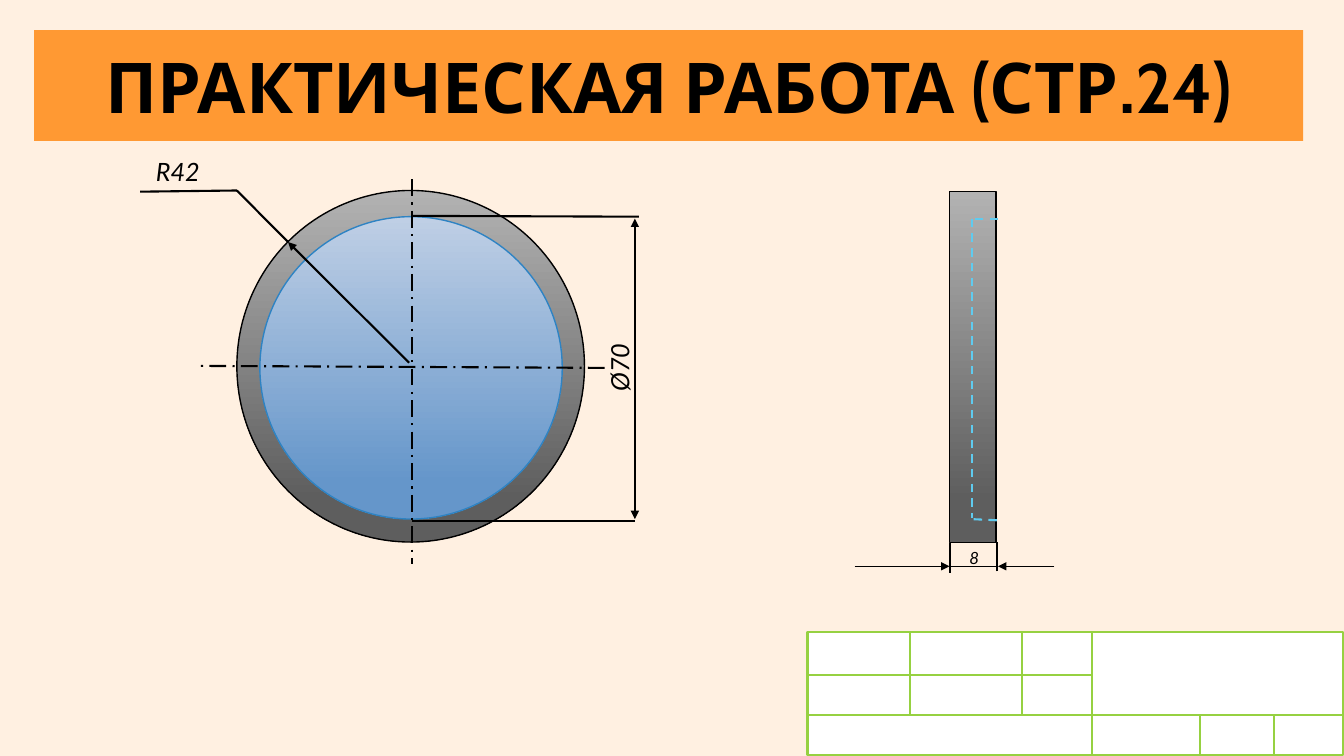
from lxml.etree import SubElement
from pptx import Presentation
from pptx.dml.color import RGBColor
from pptx.enum.dml import MSO_LINE_DASH_STYLE as Dash
from pptx.enum.shapes import MSO_CONNECTOR as Connector, MSO_SHAPE as Preset
from pptx.enum.text import MSO_ANCHOR as Anchor, MSO_AUTO_SIZE as AutoSize, PP_ALIGN as Align
from pptx.oxml.ns import qn
from pptx.util import Cm, Pt

# Content, lengths in cm
TITLE = "ПРАКТИЧЕСКАЯ РАБОТА (СТР.24)"
TITLE_BOX = (0.86, 0.76, 31.98, 2.79)

STAMP_BOX = (20.35, 15.93, 13.49, 3.1)
STAMP_SPLIT = 27.51
STAMP_COLUMNS_ABOVE = [22.94, 25.76]
STAMP_COLUMNS_BELOW = [30.23, 32.11]
STAMP_ROWS = [17.02, 18.01]

OUTER_CIRCLE = (5.97, 4.8, 8.76, 8.86)
INNER_CIRCLE = (6.55, 5.46, 7.62, 7.62)
SIDE_VIEW = (23.93, 4.83, 1.17, 8.84)

AXES = [(10.39, 4.52, 10.39, 14.2), (15.24, 9.27, 5.05, 9.22)]
HIDDEN_EDGES = [
    (24.49, 5.51, 24.49, 13.06),
    (25.12, 13.11, 24.46, 13.08),
    (25.15, 5.51, 24.51, 5.51),
]
# Each dimension line with its arrowheads
FRONT_DIMENSIONS = [
    ((16.0, 13.13, 10.39, 13.13), ()),
    ((10.31, 9.14, 7.26, 6.1), ("tail",)),
    ((7.26, 6.1, 5.97, 4.8), ()),
    ((5.97, 4.8, 3.53, 4.83), ()),
    ((16.1, 5.46, 10.41, 5.44), ()),
    ((16.0, 5.51, 16.0, 13.08), ("head", "tail")),
]
SIDE_EXTENSIONS = [(23.95, 14.43, 23.95, 13.69), (25.12, 14.4, 25.12, 13.67)]
SIDE_DIMENSIONS = [
    ((21.54, 14.27, 23.93, 14.27), ("tail",)),
    ((25.12, 14.27, 23.95, 14.27), ()),
    ((26.57, 14.27, 25.15, 14.27), ("tail",)),
]
# Text, box, size name, rotation
LABELS = [
    ("R42", (3.68, 3.81, 1.83, 1.02), "label", 0),
    ("Ø70", (14.73, 7.95, 2.54, 1.8), "label", 270),
    ("8", (24.18, 13.67, 2.67, 0.76), "small", 0),
]

THEME = {
    "background": "FFF0E1", "banner": "FF9933", "ink": "000000",
    "paper": "FFFFFF", "stamp": "96D141", "hidden": "5FCBEF",
    "glass_edge": "2E83C3",
    "metal": ("B2B2B2", "5E5E5E"), "glass": ("BFCFE5", "6596CA"),
    "title_font": "Cabin", "label_font": "Lato",
    "title": 50, "label": 18, "small": 12,
    "thick": 1.5, "thin": 1,
}


def color(name):
    return RGBColor.from_string(THEME[name])


def apply_format(target, values):
    for name, value in values.items():
        setattr(target, name, value)


def add_box(slide, preset, box, fill, edge=None, width="thin"):
    shape = slide.shapes.add_shape(preset, *map(Cm, box))
    shape.shadow.inherit = False
    if isinstance(THEME[fill], tuple):
        shape.fill.gradient()
        shape.fill.gradient_angle = 270
        for stop, place, tone in zip(shape.fill.gradient_stops, (0, 0.88), THEME[fill]):
            stop.color.rgb = RGBColor.from_string(tone)
            stop.position = place
    else:
        shape.fill.solid()
        shape.fill.fore_color.rgb = color(fill)
    if edge:
        shape.line.color.rgb = color(edge)
        shape.line.width = Pt(THEME[width])
    else:
        shape.line.fill.background()
    return shape


def add_line(slide, ends, ink="ink", width="thick", dash=None, arrows=()):
    connector = slide.shapes.add_connector(Connector.STRAIGHT, *map(Cm, ends))
    connector.line.color.rgb = color(ink)
    connector.line.width = Pt(THEME[width])
    if dash:
        connector.line.dash_style = dash
    properties = connector.line._get_or_add_ln()
    for end in arrows:
        SubElement(properties, qn(f"a:{end}End"), type="triangle")
    SubElement(connector._element.spPr, qn("a:effectLst"))


def write(shape, text, size, font, **style):
    run = shape.text_frame.paragraphs[0].add_run()
    run.text = text
    apply_format(run.font, {"name": THEME[font], "size": Pt(THEME[size]), **style})
    run.font.color.rgb = color("ink")


def add_stamp(slide):
    left, top, width, height = STAMP_BOX
    right, bottom, middle = left + width, top + height, STAMP_ROWS[-1]
    add_box(slide, Preset.RECTANGLE, STAMP_BOX, "paper", "stamp", "thick")
    rules = [(STAMP_SPLIT, top, STAMP_SPLIT, bottom), (STAMP_SPLIT, middle, right, middle)]
    rules += [(left, y, STAMP_SPLIT, y) for y in STAMP_ROWS]
    rules += [(x, top, x, middle) for x in STAMP_COLUMNS_ABOVE]
    rules += [(x, middle, x, bottom) for x in STAMP_COLUMNS_BELOW]
    for ends in rules:
        add_line(slide, ends, "stamp")


def add_front_view(slide):
    add_box(slide, Preset.OVAL, OUTER_CIRCLE, "metal", "ink")
    add_box(slide, Preset.OVAL, INNER_CIRCLE, "glass", "glass_edge")
    for ends in AXES:
        add_line(slide, ends, dash=Dash.LONG_DASH_DOT)
    for ends, arrows in FRONT_DIMENSIONS:
        add_line(slide, ends, arrows=arrows)


def add_side_view(slide):
    add_box(slide, Preset.RECTANGLE, SIDE_VIEW, "metal", "ink")
    for ends in HIDDEN_EDGES:
        add_line(slide, ends, "hidden", dash=Dash.DASH)
    for ends in SIDE_EXTENSIONS:
        add_line(slide, ends)
    for ends, arrows in SIDE_DIMENSIONS:
        add_line(slide, ends, width="thin", arrows=arrows)


def add_labels(slide):
    for text, box, size, rotation in LABELS:
        label = slide.shapes.add_textbox(*map(Cm, box))
        label.rotation = rotation
        apply_format(label.text_frame, {"word_wrap": True, "auto_size": AutoSize.SHAPE_TO_FIT_TEXT})
        write(label, text, size, "label_font", italic=True)


def add_title(slide):
    banner = add_box(slide, Preset.RECTANGLE, TITLE_BOX, "banner")
    apply_format(banner.text_frame, {"word_wrap": True, "vertical_anchor": Anchor.MIDDLE})
    banner.text_frame.paragraphs[0].alignment = Align.CENTER
    write(banner, TITLE, "title", "title_font", bold=True)


def main():
    presentation = Presentation()
    apply_format(presentation, {"slide_width": Cm(33.87), "slide_height": Cm(19.05)})
    slide = presentation.slides.add_slide(presentation.slide_layouts[6])
    slide.background.fill.solid()
    slide.background.fill.fore_color.rgb = color("background")
    for add_part in (add_stamp, add_front_view, add_side_view, add_labels, add_title):
        add_part(slide)
    presentation.save("out.pptx")


if __name__ == "__main__":
    main()
